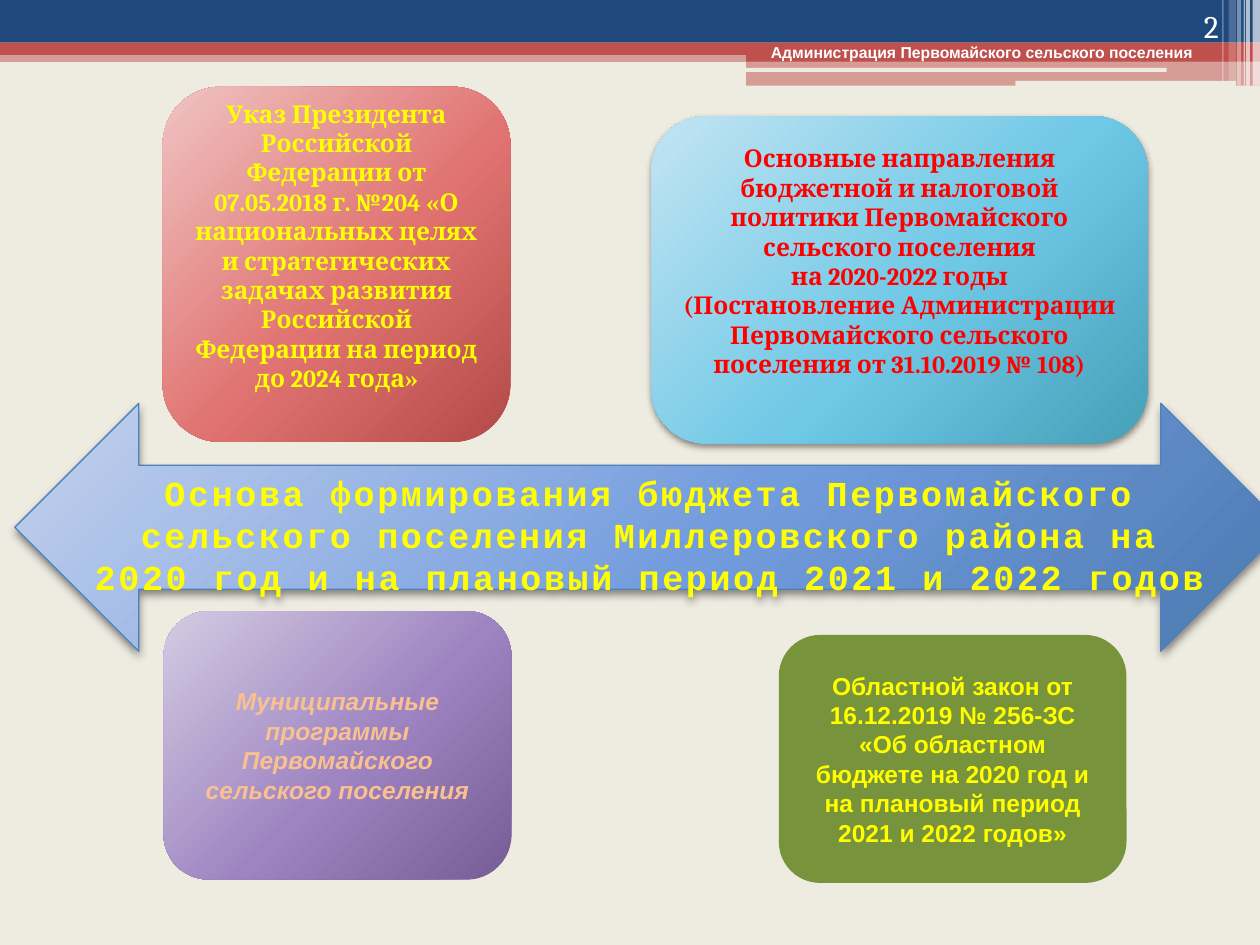
from dataclasses import dataclass
from typing import Optional

import pptx
import pptx.dml.color
import pptx.enum.shapes
import pptx.enum.text
import pptx.oxml
import pptx.oxml.ns
import pptx.util
from lxml import etree

Cm, Pt = pptx.util.Cm, pptx.util.Pt
qn = pptx.oxml.ns.qn
Geometry = pptx.enum.shapes.MSO_SHAPE
Anchor = pptx.enum.text.MSO_ANCHOR
Align = pptx.enum.text.PP_ALIGN

NAVY, RED, CREAM, WHITE, YELLOW = "1F497D", "C0504D", "EEECE1", "FFFFFF", "FFFF00"
STOP_POSITIONS = (0, 55, 100)
DEFAULT_INSET, RAISED_INSET = 0.13, 0.88


@dataclass(frozen=True)
class Area:
    """Left, top, width and height in centimetres."""
    left: float
    top: float
    width: float
    height: float

    def lengths(self) -> tuple:
        return Cm(self.left), Cm(self.top), Cm(self.width), Cm(self.height)


@dataclass(frozen=True)
class Band:
    area: Area
    color: str
    opacity: int = 100
    rounded: bool = False


@dataclass(frozen=True)
class Style:
    size: float
    font: str
    color: str
    bold: bool = True
    italic: bool = False
    spacing: float = 0


@dataclass(frozen=True)
class Block:
    area: Area
    fill: tuple
    style: Style
    paragraphs: tuple
    geometry: int = Geometry.ROUNDED_RECTANGLE
    line: Optional[str] = None
    shadow: bool = False
    anchor: int = Anchor.MIDDLE
    bottom_inset: float = DEFAULT_INSET


def rgb(color: str) -> pptx.dml.color.RGBColor:
    return pptx.dml.color.RGBColor.from_string(color)


def add_child(parent, tag: str, **attributes):
    child = etree.SubElement(parent, qn(tag))
    for key, value in attributes.items():
        child.set(key, str(value))
    return child


def fill_solid(shape, color: str, opacity: int = 100) -> None:
    shape.fill.solid()
    shape.fill.fore_color.rgb = rgb(color)
    if opacity < 100:
        color_xml = shape.element.spPr.find(qn("a:solidFill"))[0]
        add_child(color_xml, "a:alpha", val=opacity * 1000)


def fill_radial(shape, colors: tuple) -> None:
    """Fill with a circular gradient centred beyond the shape's edges."""
    shape.fill.gradient()
    gradient = shape.element.spPr.find(qn("a:gradFill"))
    for child in list(gradient):
        gradient.remove(child)
    stops = add_child(gradient, "a:gsLst")
    for position, color in zip(STOP_POSITIONS, colors):
        stop = add_child(stops, "a:gs", pos=position * 1000)
        add_child(stop, "a:srgbClr", val=color)
    circle = add_child(gradient, "a:path", path="circle")
    add_child(circle, "a:fillToRect", l=-40000, t=-90000, r=140000, b=190000)


def add_shadow(shape) -> None:
    effects = shape.element.spPr.find(qn("a:effectLst"))
    outer = add_child(effects, "a:outerShdw", blurRad=Pt(4), dist=Pt(2),
                      dir=5400000, rotWithShape=0)
    color = add_child(outer, "a:srgbClr", val="000000")
    add_child(color, "a:alpha", val=45000)


def write(frame, paragraphs: tuple, style: Style, align: int, anchor: int) -> None:
    frame.word_wrap = True
    frame.vertical_anchor = anchor
    for index, words in enumerate(paragraphs):
        paragraph = frame.add_paragraph() if index else frame.paragraphs[0]
        paragraph.alignment = align
        run = paragraph.add_run()
        run.text = words
        font = run.font
        font.size, font.name = Pt(style.size), style.font
        font.bold, font.italic = style.bold, style.italic
        font.color.rgb = rgb(style.color)
        if style.spacing:
            run._r.get_or_add_rPr().set("spc", str(int(style.spacing * 100)))


def draw_band(slide, band: Band) -> None:
    geometry = Geometry.ROUNDED_RECTANGLE if band.rounded else Geometry.RECTANGLE
    shape = slide.shapes.add_shape(geometry, *band.area.lengths())
    shape.shadow.inherit = False
    shape.line.fill.background()
    fill_solid(shape, band.color, band.opacity)


def draw_block(slide, block: Block) -> None:
    shape = slide.shapes.add_shape(block.geometry, *block.area.lengths())
    if len(block.fill) > 1:
        fill_radial(shape, block.fill)
    else:
        fill_solid(shape, block.fill[0])
    if block.line:
        shape.line.color.rgb = rgb(block.line)
        shape.line.width = Pt(0.75)
    else:
        shape.line.fill.background()
    shape.shadow.inherit = False
    if block.shadow:
        add_shadow(shape)
    shape.text_frame.margin_bottom = Cm(block.bottom_inset)
    write(shape.text_frame, block.paragraphs, block.style, Align.CENTER, block.anchor)


def draw_label(slide, area: Area, words: str, style: Style, align: int, anchor: int) -> None:
    label = slide.shapes.add_textbox(*area.lengths())
    write(label.text_frame, (words,), style, align, anchor)


BANDS = (
    Band(Area(0, 1.02, 25.4, 0.23), RED, 50),
    Band(Area(0, 0, 25.4, 0.86), NAVY),
    Band(Area(0, 0.86, 25.4, 0.25), RED),
    Band(Area(15.04, 0.99, 10.36, 0.25), RED),
    Band(Area(15.04, 1.22, 10.36, 0.51), RED, 50),
    Band(Area(15.01, 1.37, 8.51, 0.08), CREAM, rounded=True),
    Band(Area(20.47, 1.63, 4.45, 0.1), CREAM, rounded=True),
) + tuple(
    Band(Area(left, 0, width, height), WHITE, opacity)
    for left, width, height, opacity in (
        (25.25, 0.15, 1.73, 65), (25.12, 0.08, 1.73, 65), (25.07, 0.03, 1.73, 60),
        (24.94, 0.08, 1.73, 40), (24.77, 0.15, 1.63, 20), (24.64, 0.03, 1.63, 30))
)

BLOCKS = (
    Block(Area(3.28, 1.75, 7.01, 7.16), ("EFC4C3", "E07371", "B34B48"),
          Style(14, "Cambria", YELLOW),
          ("Указ Президента Российской Федерации от 07.05.2018 г. №204 «О национальных "
           "целях и стратегических задачах развития Российской Федерации на период "
           "до 2024 года»",),
          bottom_inset=RAISED_INSET),
    Block(Area(13.13, 2.34, 10.01, 6.6), ("C2E4F2", "6FC8E6", "46A0B8"),
          Style(14, "Cambria", "FF0000"),
          ("Основные направления бюджетной и налоговой политики Первомайского "
           "сельского поселения",
           "на 2020-2022 годы",
           "(Постановление Администрации Первомайского сельского поселения "
           "от 31.10.2019 № 108)"),
          shadow=True, bottom_inset=RAISED_INSET),
    Block(Area(3.3, 12.32, 7.01, 5.41), ("D4CBE2", "9E85C1", "775D97"),
          Style(14, "Arial", "FAC090", italic=True),
          ("Муниципальные программы Первомайского сельского поселения",)),
    Block(Area(15.7, 12.8, 7.01, 5), ("77933C",), Style(14, "Arial", YELLOW),
          ("Областной закон от 16.12.2019 № 256-ЗС «Об областном бюджете на 2020 год "
           "и на плановый период 2021 и 2022 годов»",)),
    Block(Area(0.3, 8.13, 25.6, 5), ("C4D2EE", "739CDD", "4A78B0"),
          Style(20, "Courier New", YELLOW, spacing=1.5),
          ("Основа формирования бюджета Первомайского сельского поселения "
           "Миллеровского района на 2020 год и на плановый период 2021 и 2022 годов",),
          geometry=Geometry.LEFT_RIGHT_ARROW, line="4F81BD", shadow=True,
          anchor=Anchor.TOP),
)


def main() -> None:
    deck = pptx.Presentation()
    deck.slide_width, deck.slide_height = Cm(25.4), Cm(19.05)
    slide = deck.slides.add_slide(deck.slide_layouts[6])
    slide.background.fill.solid()
    slide.background.fill.fore_color.rgb = rgb(CREAM)
    for band in BANDS:
        draw_band(slide, band)
    draw_label(slide, Area(15.29, 0.74, 9.4, 0.64),
               "Администрация Первомайского сельского поселения",
               Style(9, "Arial", WHITE), Align.LEFT, Anchor.TOP)
    for block in BLOCKS:
        draw_block(slide, block)
    draw_label(slide, Area(22.71, 0, 2.11, 1.02), "2",
               Style(18, "Cambria", WHITE, bold=False), Align.RIGHT, Anchor.BOTTOM)
    deck.save("out.pptx")


if __name__ == "__main__":
    main()
